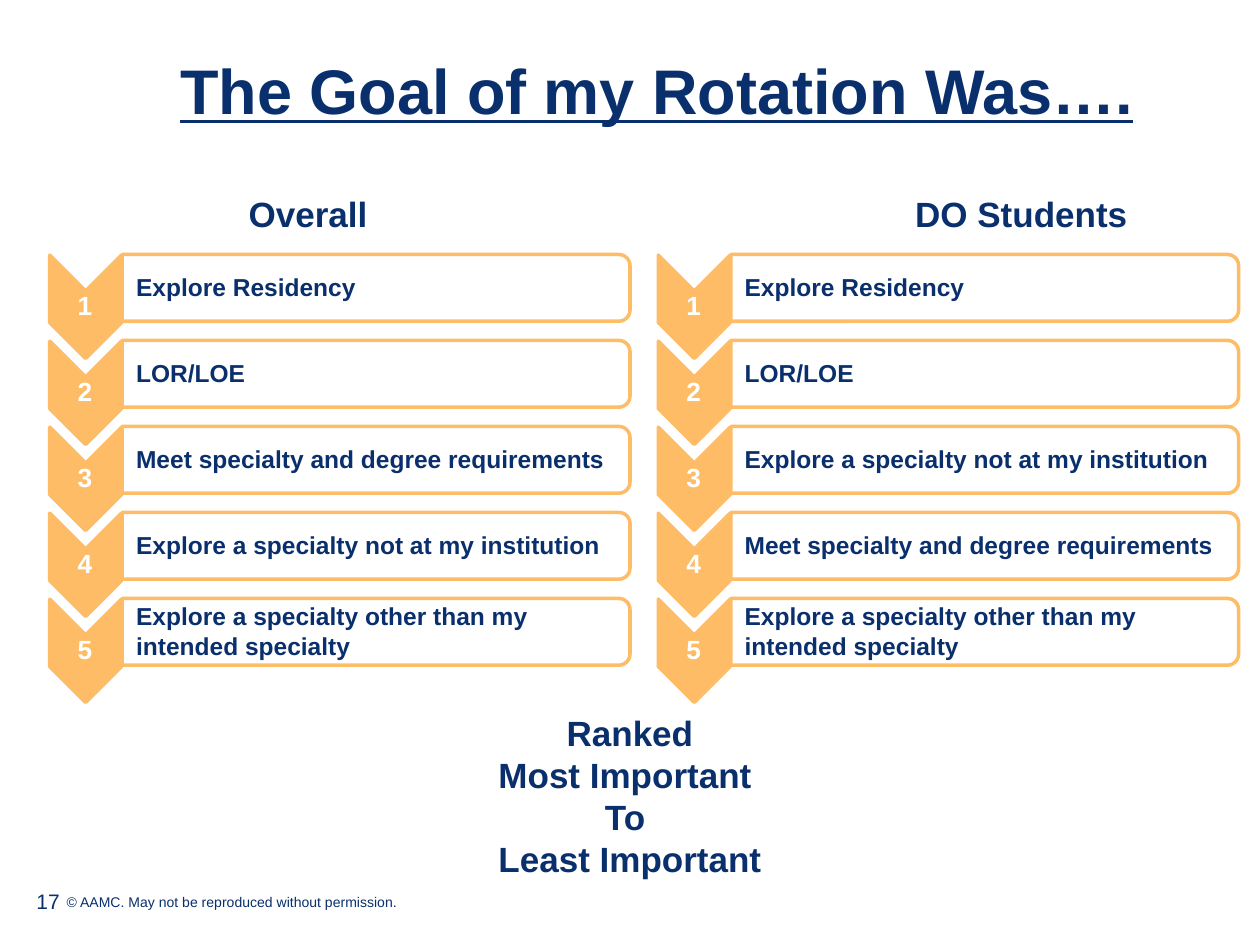
from lxml import etree
from pptx import Presentation, util as u
from pptx.dml.color import RGBColor
from pptx.enum import shapes, text
from pptx.oxml.ns import qn

NAVY, ORANGE, WHITE = "092F6D", "FEBC67", "FFFFFF"
CENTER, LEFT = text.PP_ALIGN.CENTER, text.PP_ALIGN.LEFT
TOP, MIDDLE, BOTTOM = text.MSO_ANCHOR.TOP, text.MSO_ANCHOR.MIDDLE, text.MSO_ANCHOR.BOTTOM

deck = Presentation()
deck.slide_width, deck.slide_height = u.Inches(10), u.Inches(7.5)
page = deck.slides.add_slide(deck.slide_layouts[6])


def add_text(place, lines, size, color=NAVY, bold=True, underline=None, align=CENTER,
             anchor=TOP, insets=(0.1, 0.05, 0.1, 0.05), spacing=None, after=0):
    """Insets run left, top, right, bottom in inches; after is in points."""
    box = page.shapes.add_textbox(*map(u.Inches, place))
    frame = box.text_frame
    frame.word_wrap = True
    frame.vertical_anchor = anchor
    (frame.margin_left, frame.margin_top,
     frame.margin_right, frame.margin_bottom) = map(u.Inches, insets)
    frame.text = "\n".join(lines)
    for para in frame.paragraphs:
        para.alignment = align
        para.line_spacing = spacing
        para.space_after = u.Pt(after)
        para.font.name = "Arial"
        para.font.size = u.Pt(size)
        para.font.bold = bold
        para.font.underline = underline
        para.font.color.rgb = RGBColor.from_string(color)


def add_turned_shape(kind, place, fill):
    """Add an orange-lined shape turned 90 degrees; place is its frame before turning."""
    shape = page.shapes.add_shape(kind, *map(u.Inches, place))
    shape.rotation = 90
    shape.shadow.inherit = False
    shape.fill.solid()
    shape.fill.fore_color.rgb = RGBColor.from_string(fill)
    shape.line.color.rgb = RGBColor.from_string(ORANGE)
    shape.line.width = u.Pt(2)
    return shape


add_text((0.43, 7.04, 8.22, 0.23), ["© AAMC. May not be reproduced without permission."],
         8, bold=False, align=LEFT)
add_text((0.63, 0.33, 9.17, 0.68), ["The Goal of my Rotation Was…."], 36,
         underline=True, anchor=BOTTOM, insets=(0, 0, 0, 0), spacing=0.85)
add_text((0.19, 6.95, 2.25, 0.4), ["17"], 12, bold=False, align=LEFT, anchor=MIDDLE)

residency = ["Explore Residency"]
letters = ["LOR/LOE"]
requirements = ["Meet specialty and degree requirements"]
elsewhere = ["Explore a specialty not at my institution"]
other = ["Explore a specialty other than my", "intended specialty"]
rankings = [
    (0.39, [residency, letters, requirements, elsewhere, other]),
    (5.22, [residency, letters, elsewhere, requirements, other]),
]
first_row, last_row = 2.15, 4.88
row_step = (last_row - first_row) / 4

for left, goals in rankings:
    for row, goal in enumerate(goals):
        top = first_row + row * row_step
        add_turned_shape(shapes.MSO_SHAPE.CHEVRON, (left - 0.12, top, 0.82, 0.57), ORANGE)
        add_text((left, top + 0.16, 0.57, 0.25), [str(row + 1)], 15, WHITE,
                 anchor=MIDDLE, insets=(0.01,) * 4, spacing=0.9)
        panel = add_turned_shape(shapes.MSO_SHAPE.ROUND_2_SAME_RECTANGLE,
                                 (left + 2.33, top - 1.88, 0.53, 4.03), WHITE)
        panel_color = panel.fill._xPr.find(qn("a:solidFill"))[0]
        etree.SubElement(panel_color, qn("a:alpha"), val="90000")
        add_text((left + 0.58, top - 0.1, 4.01, 0.48), goal, 14, align=LEFT,
                 anchor=MIDDLE, insets=(0.11, 0.01, 0.01, 0.01), spacing=0.9, after=2.5)

add_text((1.8, 1.48, 1.29, 0.44), ["Overall"], 20)
add_text((7.13, 1.48, 1.95, 0.44), ["DO Students"], 20)
add_text((3.8, 5.6, 2.4, 1.45),
         ["Ranked", "Most Important ", "To ", "Least Important"], 20)

deck.save("out.pptx")
